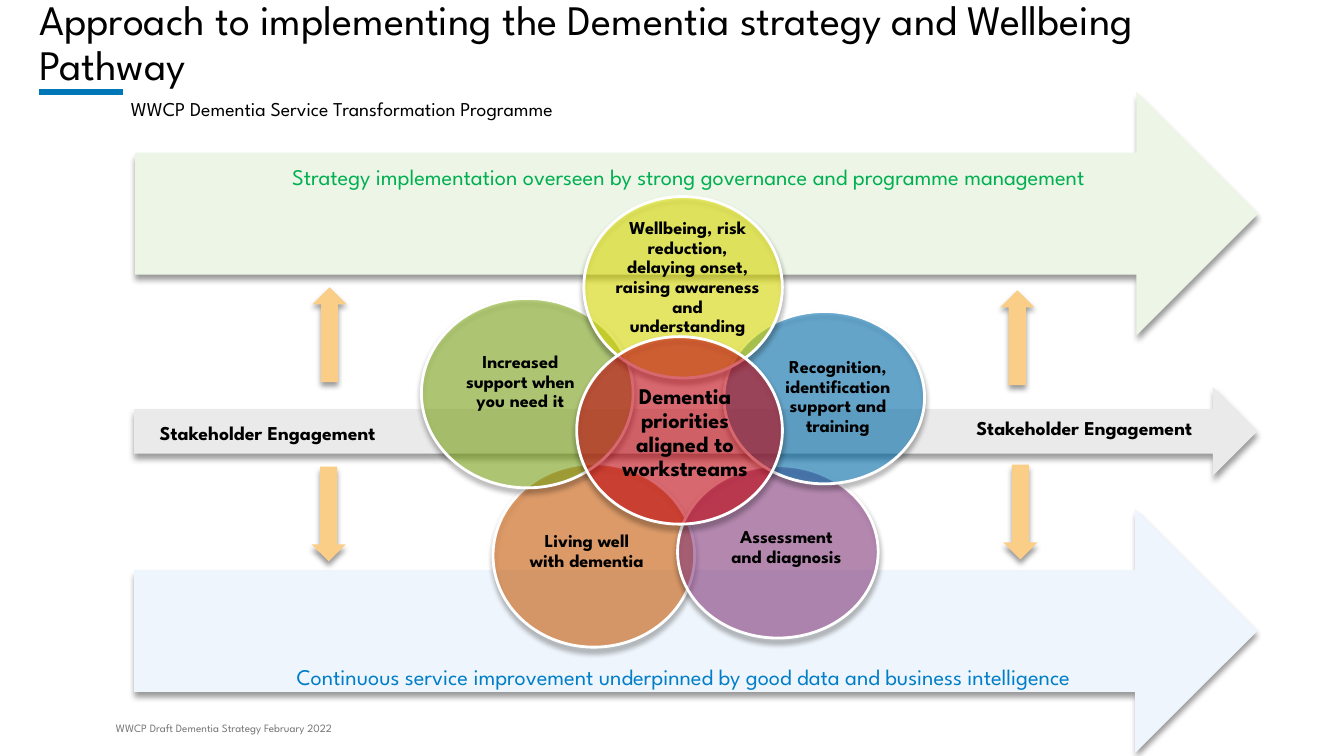
"""Builds the slide on implementing the Dementia strategy and Wellbeing Pathway."""
from lxml import etree
from pptx import Presentation
from pptx.dml.color import RGBColor
from pptx.enum.shapes import MSO_CONNECTOR, MSO_SHAPE
from pptx.enum.text import MSO_ANCHOR, PP_ALIGN
from pptx.oxml import parse_xml
from pptx.oxml.ns import nsdecls, qn
from pptx.util import Inches, Pt

ARROW, OVAL = MSO_SHAPE.RIGHT_ARROW, MSO_SHAPE.OVAL
STRAIGHT = MSO_CONNECTOR.STRAIGHT
LEFT, CENTER = PP_ALIGN.LEFT, PP_ALIGN.CENTER
TOP, BOTTOM = MSO_ANCHOR.TOP, MSO_ANCHOR.BOTTOM

FONT = "League Spartan"
BLACK = RGBColor(0x00, 0x00, 0x00)
WHITE = RGBColor(0xFF, 0xFF, 0xFF)
FOOTER_GREY = RGBColor(0x75, 0x75, 0x74)
RULE_BLUE = RGBColor(0x00, 0x77, 0xB7)
BLUE = RGBColor(0x00, 0x7E, 0xC7)
GREEN = RGBColor(0x00, 0xB0, 0x50)
PALE_GREY = RGBColor(0xEA, 0xEA, 0xEA)
PALE_BLUE = RGBColor(0xEF, 0xF5, 0xFC)
PALE_GREEN = RGBColor(0xEC, 0xF5, 0xE6)
APRICOT = RGBColor(0xFA, 0xCE, 0x87)
ORANGE = RGBColor(0xEC, 0x69, 0x06)
LIME = RGBColor(0x90, 0xBF, 0x1C)
PURPLE = RGBColor(0x9B, 0x43, 0x92)
YELLOW = RGBColor(0xFF, 0xFF, 0x00)
RED = RGBColor(0xE3, 0x06, 0x13)

prs = Presentation()
prs.slide_width, prs.slide_height = Inches(13.33), Inches(7.5)
slide = prs.slides.add_slide(prs.slide_layouts[6])


def add_text(text, *, at, size, color=BLACK, bold=False, align=CENTER, anchor=TOP,
             spacing=0.9, wrap=True, padded=True):
    frame = slide.shapes.add_textbox(*map(Inches, at)).text_frame
    frame.word_wrap = wrap
    frame.vertical_anchor = anchor
    if not padded:
        frame.margin_left = frame.margin_right = 0
        frame.margin_top = frame.margin_bottom = 0
    paragraph = frame.paragraphs[0]
    paragraph.alignment = align
    paragraph.line_spacing = spacing
    run = paragraph.add_run()
    run.text = text
    run.font.name, run.font.size, run.font.bold = FONT, Pt(size), bold
    run.font.color.rgb = color


def add_shadowed(preset, at, color, rotation=0):
    shape = slide.shapes.add_shape(preset, *map(Inches, at))
    shape.rotation = rotation
    shape.fill.solid()
    shape.fill.fore_color.rgb = color
    shape.line.fill.background()
    shape.shadow.inherit = False
    shape._element.spPr.find(qn("a:effectLst")).append(parse_xml(
        f'<a:outerShdw {nsdecls("a")} blurRad="{Pt(4)}" dist="{Pt(3)}" dir="5400000" '
        'rotWithShape="0"><a:srgbClr val="000000"><a:alpha val="40000"/></a:srgbClr>'
        '</a:outerShdw>'))
    return shape


add_text("WWCP Draft Dementia Strategy February 2022", at=(1.15, 7.16, 2.51, 0.21),
         size=8, color=FOOTER_GREY, align=LEFT, spacing=1, padded=False)
title_rule = slide.shapes.add_connector(
    STRAIGHT, Inches(0.39), Inches(0.91), Inches(1.22), Inches(0.91))
title_rule.line.color.rgb = RULE_BLUE
title_rule.line.width = Pt(4.5)
etree.SubElement(title_rule._element.spPr, qn("a:effectLst"))

add_shadowed(ARROW, (1.33, 3.84, 11.14, 0.88), PALE_GREY)
add_shadowed(ARROW, (1.33, 5.05, 11.14, 2.42), PALE_BLUE)
add_text("Approach to implementing the Dementia strategy and Wellbeing Pathway",
         at=(0.39, 0.45, 10.96, 0.44), size=30, align=LEFT, anchor=BOTTOM, padded=False)
add_shadowed(ARROW, (1.34, 0.91, 11.14, 2.42), PALE_GREEN)

for left, top, rotation in [(2.8, 3.15, 270), (9.65, 4.91, 90),
                            (9.62, 3.18, 270), (2.79, 4.93, 90)]:
    add_shadowed(ARROW, (left, top, 0.94, 0.34), APRICOT, rotation)

for left, top in [(9.2, 4.13), (1.1, 4.18)]:
    add_text("Stakeholder Engagement", at=(left, top, 3.11, 0.24), size=14, bold=True,
             spacing=1, padded=False)
add_text("Strategy implementation overseen by strong governance and programme management",
         at=(1.89, 1.6, 9.88, 0.34), size=16, color=GREEN, wrap=False)
add_text("Continuous service improvement underpinned by good data and business intelligence",
         at=(1.97, 6.56, 9.62, 0.34), size=16, color=BLUE, wrap=False)
add_text("WWCP Dementia Service Transformation Programme", at=(1.2, 0.91, 5.22, 0.34),
         size=14, align=LEFT, spacing=1, wrap=False)

priorities = [
    ((4.89, 4.6, 2, 1.82), ORANGE, "Living well with dementia", (5.12, 5.23, 1.4, 0.69), 13),
    ((4.18, 2.96, 2.1, 1.88), LIME, "Increased support when you need it",
     (4.52, 3.45, 1.28, 0.89), 13),
    ((6.72, 4.62, 1.99, 1.71), PURPLE, "Assessment and diagnosis",
     (7.13, 5.19, 1.34, 0.69), 13),
    ((7.18, 3.09, 1.99, 1.71), BLUE, "Recognition, identification support and training",
     (7.64, 3.5, 1.34, 0.89), 13),
    ((5.79, 1.95, 1.97, 1.8), YELLOW,
     "Wellbeing, risk reduction, delaying onset, raising awareness and understanding",
     (6, 2.12, 1.64, 1.28), 13),
    ((5.72, 3.34, 2.04, 1.86), RED, "Dementia priorities aligned to workstreams",
     (5.97, 3.77, 1.65, 1.07), 16),
]
for circle_at, color, label, label_at, size in priorities:
    circle = add_shadowed(OVAL, circle_at, color)
    circle.line.color.rgb = WHITE
    circle.line.width = Pt(2)
    fill_color = circle._element.spPr.find(qn("a:solidFill")).find(qn("a:srgbClr"))
    etree.SubElement(fill_color, qn("a:alpha"), val="50000")
    add_text(label, at=label_at, size=size, bold=True)

prs.save("out.pptx")
